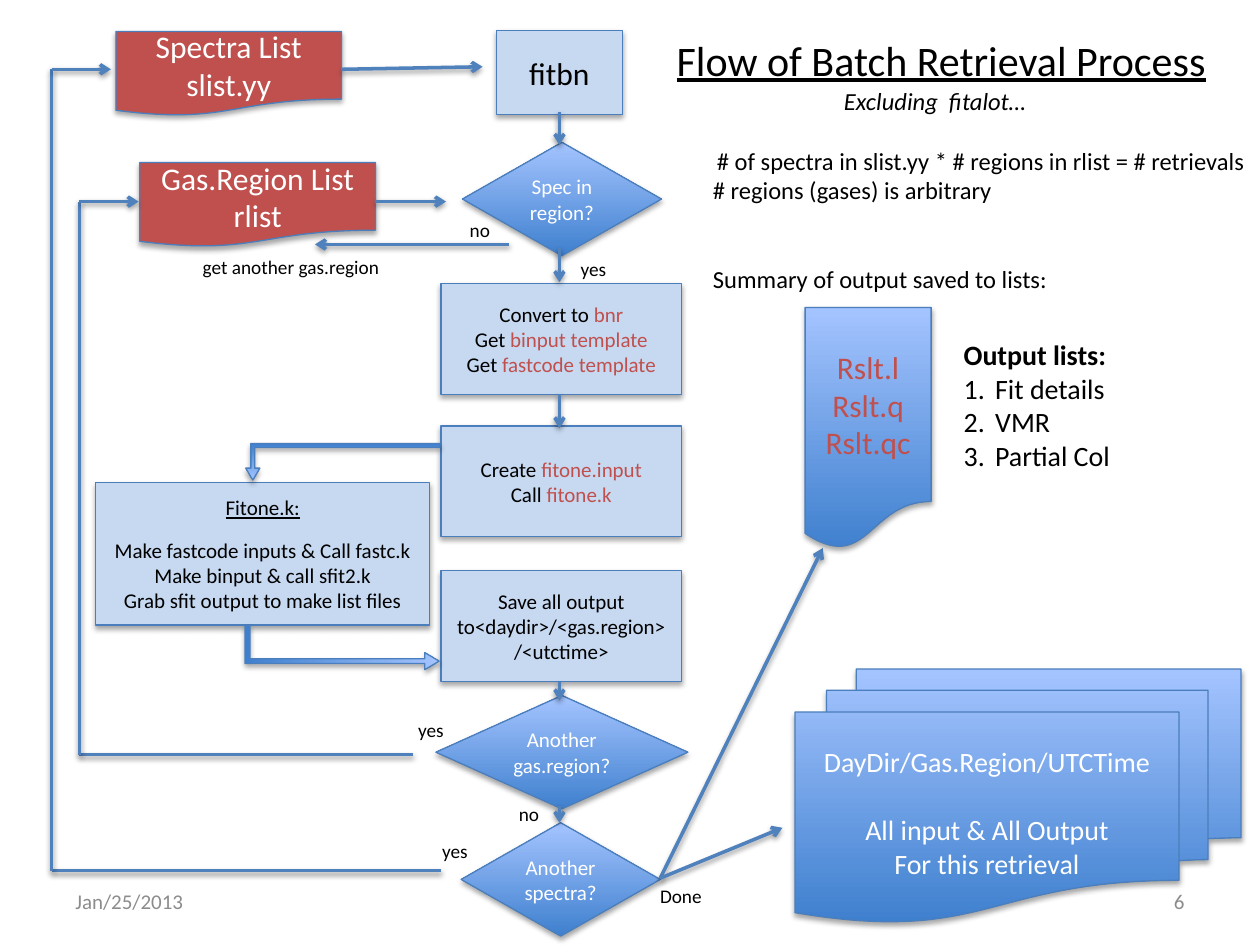
from lxml import etree
from pptx import Presentation
from pptx import util as u
from pptx.dml.color import RGBColor
from pptx.enum import shapes, text
from pptx.oxml.ns import qn

COLORS = {
    "black": "000000", "white": "FFFFFF", "red": "C0504D", "pale": "C6D9F1",
    "outline": "4B7EBC", "line": "4F81BD", "dark": "3F80CE", "light": "A4C4FF",
    "grey": "8C8C8C",
}
G = shapes.MSO_SHAPE
AL = text.PP_ALIGN
MID = text.MSO_ANCHOR.MIDDLE


def rgb(name):
    return RGBColor.from_string(COLORS[name])


class Flow:
    font = "Calibri"

    def __init__(self, prs):
        self.s = prs.slides.add_slide(prs.slide_layouts[5])

    def shadow(self, sp, alpha, dist):
        pr = sp._element.spPr
        for old in pr.findall(qn("a:effectLst")):
            pr.remove(old)
        fx = etree.SubElement(pr, qn("a:effectLst"))
        sh = etree.SubElement(fx, qn("a:outerShdw"), blurRad=str(u.Pt(3.1)),
                              dist=str(u.Pt(dist)), dir="5400000", rotWithShape="0")
        clr = etree.SubElement(sh, qn("a:srgbClr"), val=COLORS["black"])
        etree.SubElement(clr, qn("a:alpha"), val=str(alpha * 1000))

    def add_text(self, tf, paras, size, color="black", align=AL.LEFT, gaps=None,
                 bold=None, italic=None, underline=None):
        for i, para in enumerate(paras):
            p = tf.paragraphs[0] if i == 0 else tf.add_paragraph()
            p.alignment = align
            if gaps and i in gaps:
                p.space_before = u.Pt(gaps[i])
            for words, tint in [(para, color)] if isinstance(para, str) else para:
                r = p.add_run()
                r.text = words
                r.font.name, r.font.size = self.font, u.Pt(size)
                r.font.color.rgb = rgb(tint)
                r.font.bold, r.font.italic, r.font.underline = bold, italic, underline

    def title(self, at, words, size):
        sp = self.s.shapes.title
        sp.left, sp.top, sp.width, sp.height = map(u.Inches, at)
        tf = sp.text_frame
        tf.word_wrap = True
        tf.auto_size = text.MSO_AUTO_SIZE.NONE
        tf.vertical_anchor = text.MSO_ANCHOR.TOP
        self.add_text(tf, [words], size, underline=True)

    def box(self, kind, at, paras=(), size=12, fill=None, color="black", gaps=None,
            rotation=0, adj=()):
        sp = self.s.shapes.add_shape(kind, *map(u.Inches, at))
        sp.rotation = rotation
        for i, value in enumerate(adj):
            sp.adjustments[i] = value
        if fill:
            sp.fill.solid()
            sp.fill.fore_color.rgb = rgb(fill)
        else:
            sp.fill.gradient()
            sp.fill.gradient_angle = 90
            for stop, name, pos in zip(sp.fill.gradient_stops, ("dark", "light"), (0, 1)):
                stop.color.rgb, stop.position = rgb(name), pos
        sp.line.color.rgb = rgb("outline")
        sp.line.width = u.Pt(0.75)
        self.shadow(sp, 35, 1.8)
        tf = sp.text_frame
        tf.word_wrap = True
        tf.vertical_anchor = MID
        self.add_text(tf, paras, size, color, AL.CENTER, gaps)
        return sp

    def label(self, at, paras, size=11, wrap=False, anchor=text.MSO_ANCHOR.TOP, **style):
        sp = self.s.shapes.add_textbox(*map(u.Inches, at))
        tf = sp.text_frame
        tf.word_wrap = wrap
        tf.vertical_anchor = anchor
        self.add_text(tf, paras, size, **style)
        return tf

    def number(self, p):
        pr = p._p.get_or_add_pPr()
        pr.set("marL", str(u.Inches(0.25)))
        pr.set("indent", str(-u.Inches(0.25)))
        etree.SubElement(pr, qn("a:buAutoNum"), type="arabicPeriod")

    def line(self, *ends, arrow=True):
        cx = self.s.shapes.add_connector(shapes.MSO_CONNECTOR.STRAIGHT, *map(u.Inches, ends))
        cx.line.color.rgb = rgb("line")
        cx.line.width = u.Pt(2)
        if arrow:
            ln = cx._element.spPr.find(qn("a:ln"))
            etree.SubElement(ln, qn("a:tailEnd"), type="arrow")
        self.shadow(cx, 38, 1.6)

    def loop(self, x, y_from, y_to, x_from, x_to):
        self.line(x, y_from, x_from, y_from, arrow=False)
        self.line(x, y_from, x, y_to, arrow=False)
        self.line(x, y_to, x_to, y_to)


def main():
    prs = Presentation()
    prs.slide_width, prs.slide_height = u.Inches(10), u.Inches(7.5)
    f = Flow(prs)
    f.title((5.27, 0.22, 4.58, 0.5), "Flow of Batch Retrieval Process", 24)

    f.box(G.FLOWCHART_PROCESS, (3.94, 0.24, 1, 0.67), ["fitbn"], 18, "pale")
    for at, paras in [
        ((0.92, 0.25, 1.79, 0.67), ["Spectra List", "slist.yy"]),
        ((1.11, 1.29, 1.87, 0.67), ["Gas.Region List", "rlist"]),
    ]:
        f.box(G.FLOWCHART_DOCUMENT, at, paras, 18, "red", "white")

    for at, words in [
        ((3.67, 1.13, 1.58, 0.9), "Spec in region?"),
        ((3.46, 5.52, 2, 0.9), "Another gas.region?"),
        ((3.66, 6.53, 1.58, 0.9), "Another spectra?"),
    ]:
        f.box(G.FLOWCHART_DECISION, at, [words], color="white")

    for top, paras in [
        (2.25, [[("Convert to ", "black"), ("bnr", "red")],
                [("Get ", "black"), ("binput template", "red")],
                [("Get ", "black"), ("fastcode template", "red")]]),
        (3.38, [[("Create ", "black"), ("fitone.input", "red")],
                [("Call ", "black"), ("fitone.k", "red")]]),
        (4.53, ["Save all output to<daydir>/<gas.region>/<utctime>"]),
    ]:
        f.box(G.FLOWCHART_PROCESS, (3.5, top, 1.91, 0.88), paras, fill="pale")

    f.loop(0.41, 6.91, 0.55, 3.5, 0.88)
    f.loop(0.63, 5.99, 1.6, 3.28, 1.1)
    for y_from, y_to in [(0.89, 1.15), (1.97, 2.24), (3.13, 3.4), (5.41, 5.56), (6.4, 6.53)]:
        f.line(4.44, y_from, 4.44, y_to)
    for ends in [
        (2.71, 0.55, 3.83, 0.53), (2.98, 1.6, 3.54, 1.6), (4.04, 1.94, 2.5, 1.94),
        (5.24, 6.97, 6.53, 4.35), (5.24, 6.97, 6.21, 6.57),
    ]:
        f.line(*ends)

    for left, top, width, words in [
        (4.51, 1.99, 0.41, "yes"), (3.41, 6.61, 0.41, "yes"), (3.22, 5.65, 0.41, "yes"),
        (4.02, 6.32, 0.36, "no"), (3.63, 1.68, 0.36, "no"), (5.14, 6.97, 0.54, "Done"),
        (1.51, 1.98, 1.62, "get another gas.region"),
    ]:
        f.label((left, top, width, 0.29), [words])

    f.box(G.FLOWCHART_DOCUMENT, (6.39, 2.44, 1, 1.92), ["Rslt.l", "Rslt.q", "Rslt.qc"],
          18, color="red")
    tf = f.label((7.55, 2.63, 1.38, 1.18),
                 ["Output lists:", "Fit details", "VMR", "Partial Col"], 16, wrap=True)
    tf.paragraphs[0].runs[0].font.bold = True
    for p in tf.paragraphs[1:]:
        f.number(p)

    f.box(G.FLOWCHART_MULTIDOCUMENT, (6.31, 5.31, 3.54, 2.01),
          ["DayDir/Gas.Region/UTCTime", "All input & All Output", "For this retrieval"],
          16, color="white", gaps={1: 19.5})
    tf = f.label((5.56, 1.11, 4.45, 1.28),
                 ["# of spectra in slist.yy * # regions in rlist = # retrievals",
                  "# regions (gases) is arbitrary", "Summary of output saved to lists:"],
                 14, gaps={2: 34})
    tf.paragraphs[0].alignment = AL.CENTER

    sp = f.box(G.FLOWCHART_PROCESS, (0.76, 3.83, 2.65, 1.13),
               ["Fitone.k:", "Make fastcode inputs & Call fastc.k",
                "Make binput & call sfit2.k", "Grab sfit output to make list files"],
               fill="pale", gaps={1: 9.75})
    sp.text_frame.paragraphs[0].runs[0].font.underline = True
    for at, rotation in [((1.95, 3.52, 1.54, 0.29), 180), ((2.54, 4.37, 0.35, 1.54), 90)]:
        f.box(G.BENT_UP_ARROW, at, rotation=rotation, adj=(0.108, 0.194, 0.327))

    f.label((6.6, 0.63, 1.73, 0.34), ["Excluding  fitalot…"], 14, italic=True)
    for left, words, align in [(0.5, "Jan/25/2013", AL.LEFT), (7.17, "6", AL.RIGHT)]:
        f.label((left, 6.95, 2.33, 0.4), [words], 12, wrap=True, anchor=MID,
                color="grey", align=align)

    prs.save("out.pptx")


if __name__ == "__main__":
    main()
